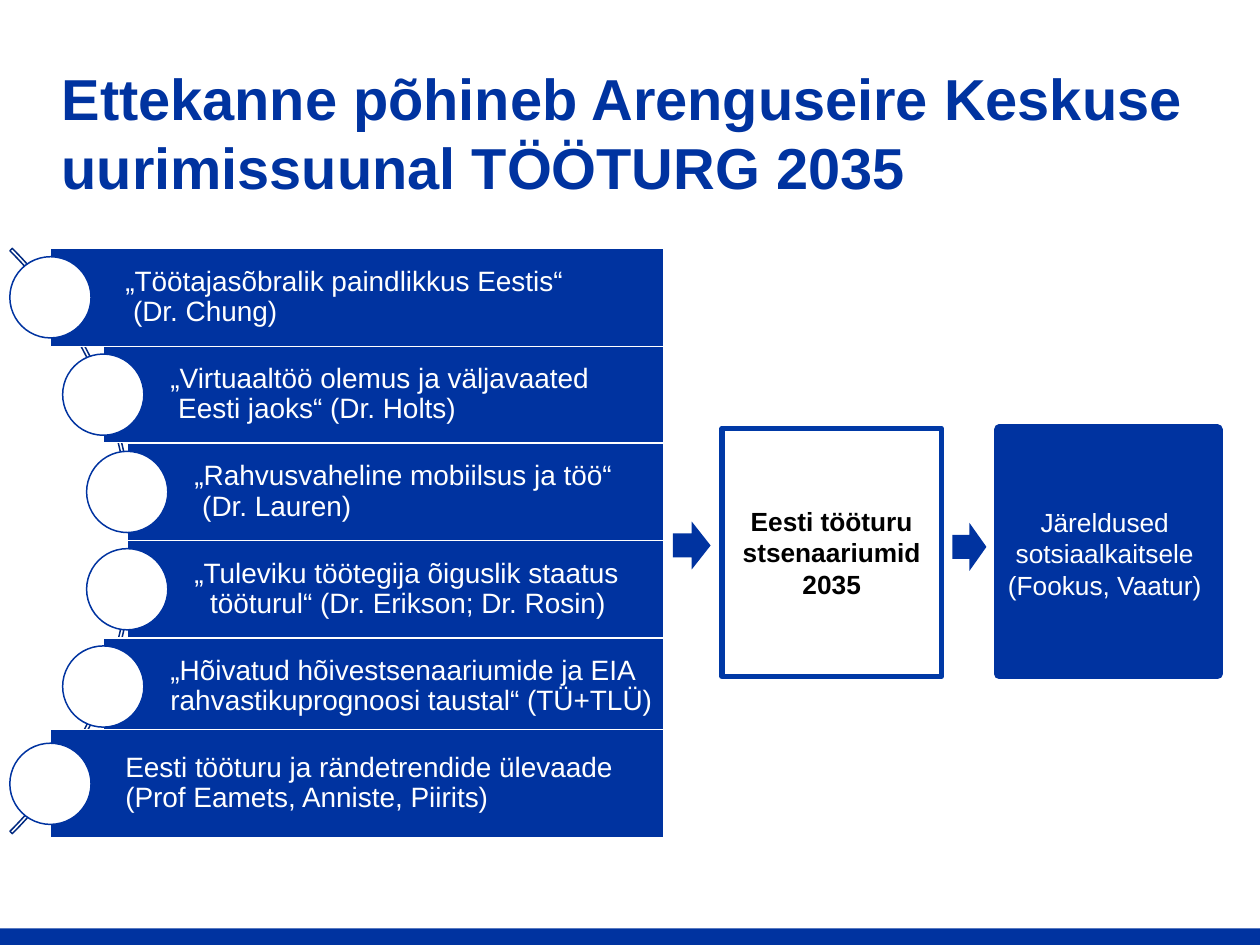
"""Builds the slide on the TÖÖTURG 2035 research strand and its studies."""
from dataclasses import dataclass

from lxml import etree
from pptx import Presentation
from pptx.dml.color import RGBColor
from pptx.enum.shapes import MSO_SHAPE
from pptx.enum.text import MSO_ANCHOR, PP_ALIGN
from pptx.util import Pt

RECT = MSO_SHAPE.RECTANGLE
ROUNDED = MSO_SHAPE.ROUNDED_RECTANGLE
OVAL = MSO_SHAPE.OVAL
ARC = MSO_SHAPE.BLOCK_ARC
ARROW = MSO_SHAPE.RIGHT_ARROW
MIDDLE = MSO_ANCHOR.MIDDLE
LEFT, CENTER = PP_ALIGN.LEFT, PP_ALIGN.CENTER


@dataclass(frozen=True)
class Theme:
    blue: str = "0033A0"
    frame_blue: str = "0039A6"
    arc_blue: str = "002980"
    white: str = "FFFFFF"
    black: str = "000000"
    font: str = "Arial"
    title_size: float = 33
    study_size: float = 16
    box_size: float = 15
    hairline: float = 0.85


@dataclass(frozen=True)
class Box:
    left: float
    top: float
    width: float
    height: float


@dataclass(frozen=True)
class Study:
    text: str
    left: float
    height: float
    indent: float
    hang: float = 0


THEME = Theme()
STUDY_RIGHT = 379.5
FIRST_CENTER = 169.9
STUDY_STEP = 55.6
DISC = 46.4
OUTER, MIDWAY, INNER = 28.8, 59, 72.7
SPACE = 4.45

STUDIES = [
    Study("„Töötajasõbralik paindlikkus Eestis“\v(Dr. Chung)", OUTER, 56, 42.8, SPACE),
    Study("„Virtuaaltöö olemus ja väljavaated\vEesti jaoks“ (Dr. Holts)", MIDWAY, 55, 38.4, SPACE),
    Study("„Rahvusvaheline mobiilsus ja töö“\v(Dr. Lauren)", INNER, 55.5, 38.4, SPACE),
    Study("„Tuleviku töötegija õiguslik staatus\vtööturul“ (Dr. Erikson; Dr. Rosin)",
          INNER, 55.5, 38.4, 2 * SPACE),
    Study("„Hõivatud hõivestsenaariumide ja EIA\vrahvastikuprognoosi taustal“ (TÜ+TLÜ)",
          MIDWAY, 55.5, 38.4),
    Study("Eesti tööturu ja rändetrendide ülevaade\v(Prof Eamets, Anniste, Piirits)",
          OUTER, 62, 42.8),
]


def add_figure(slide, kind, box: Box, fill: str = "", line: str = "", weight: float = 0):
    """Adds a shadowless shape; an empty colour means no fill or no line."""
    figure = slide.shapes.add_shape(
        kind, Pt(box.left), Pt(box.top), Pt(box.width), Pt(box.height))
    figure.shadow.inherit = False
    if fill:
        figure.fill.solid()
        figure.fill.fore_color.rgb = RGBColor.from_string(fill)
    else:
        figure.fill.background()
    if line:
        figure.line.color.rgb = RGBColor.from_string(line)
        figure.line.width = Pt(weight)
    else:
        figure.line.fill.background()
    return figure


def write(frame, text: str, size: float, color: str, align=LEFT, bold: bool = False,
          insets: tuple = (7.2, 3.6, 7.2, 3.6), spacing: float = 1.0) -> None:
    """Fills a text frame, centred vertically, and formats its paragraphs."""
    frame.text = text
    frame.word_wrap = True
    frame.vertical_anchor = MIDDLE
    (frame.margin_left, frame.margin_top,
     frame.margin_right, frame.margin_bottom) = map(Pt, insets)
    for paragraph in frame.paragraphs:
        paragraph.alignment = align
        paragraph.line_spacing = spacing
        for run in paragraph.runs:
            run.font.name = THEME.font
            run.font.size = Pt(size)
            run.font.bold = bold
            run.font.color.rgb = RGBColor.from_string(color)


def set_hanging(paragraph, hang: float) -> None:
    """Indents every line of a paragraph after the first."""
    properties: etree.ElementBase = paragraph._p.get_or_add_pPr()
    properties.set("marL", str(Pt(hang)))
    properties.set("indent", str(-Pt(hang)))


def add_study(slide, study: Study, center: float) -> None:
    """Draws one study bar with the disc on its left edge."""
    bar = add_figure(
        slide, RECT,
        Box(study.left, center - study.height / 2, STUDY_RIGHT - study.left, study.height),
        THEME.blue, THEME.white, THEME.hairline)
    write(bar.text_frame, study.text, THEME.study_size, THEME.white,
          insets=(study.indent, 2.9, 2.9, 2.9), spacing=0.9)
    if study.hang:
        set_hanging(bar.text_frame.paragraphs[0], study.hang)
    add_figure(slide, OVAL, Box(study.left - DISC / 2, center - DISC / 2, DISC, DISC),
               THEME.white, THEME.blue, THEME.hairline)


def add_title(slide) -> None:
    """Adds the slide title."""
    title = slide.shapes.add_textbox(Pt(28.1), Pt(30.2), Pt(668.2), Pt(90))
    write(title.text_frame, "Ettekanne põhineb Arenguseire Keskuse uurimissuunal TÖÖTURG 2035",
          THEME.title_size, THEME.blue, bold=True)


def add_studies(slide) -> None:
    """Draws the arc and the studies along it."""
    arc = add_figure(slide, ARC, Box(-396.7, 72.7, 473, 473), "", THEME.arc_blue, THEME.hairline)
    for index, value in enumerate((189, 27, 0.004)):
        arc.adjustments[index] = value
    for index, study in enumerate(STUDIES):
        add_study(slide, study, FIRST_CENTER + index * STUDY_STEP)


def add_outcomes(slide) -> None:
    """Draws the scenarios and conclusions boxes with their arrows."""
    scenarios = add_figure(slide, ROUNDED, Box(412.6, 244.8, 125.3, 141.8),
                           THEME.white, THEME.frame_blue, 3)
    write(scenarios.text_frame, "Eesti tööturu stsenaariumid 2035",
          THEME.box_size, THEME.black, CENTER, True)
    conclusions = add_figure(slide, ROUNDED, Box(571, 245.5, 124.6, 139.7),
                             THEME.blue, THEME.blue, 6)
    write(conclusions.text_frame, "Järeldused sotsiaalkaitsele\n(Fookus, Vaatur)",
          THEME.box_size, THEME.white, CENTER, insets=(5, 5, 9, 3.6))
    for box in (scenarios, conclusions):
        box.adjustments[0] = 0
    for arrow in (Box(384.5, 298, 21.6, 27.4), Box(544.3, 298.8, 19.4, 27.4)):
        add_figure(slide, ARROW, arrow, THEME.blue)


def main() -> None:
    """Builds and saves the presentation."""
    deck = Presentation()
    deck.slide_width, deck.slide_height = Pt(720), Pt(540)
    slide = deck.slides.add_slide(deck.slide_layouts[6])
    add_figure(slide, RECT, Box(0, 530.6, 720, 9.4), THEME.blue)
    add_title(slide)
    add_studies(slide)
    add_outcomes(slide)
    deck.save("out.pptx")


if __name__ == "__main__":
    main()
